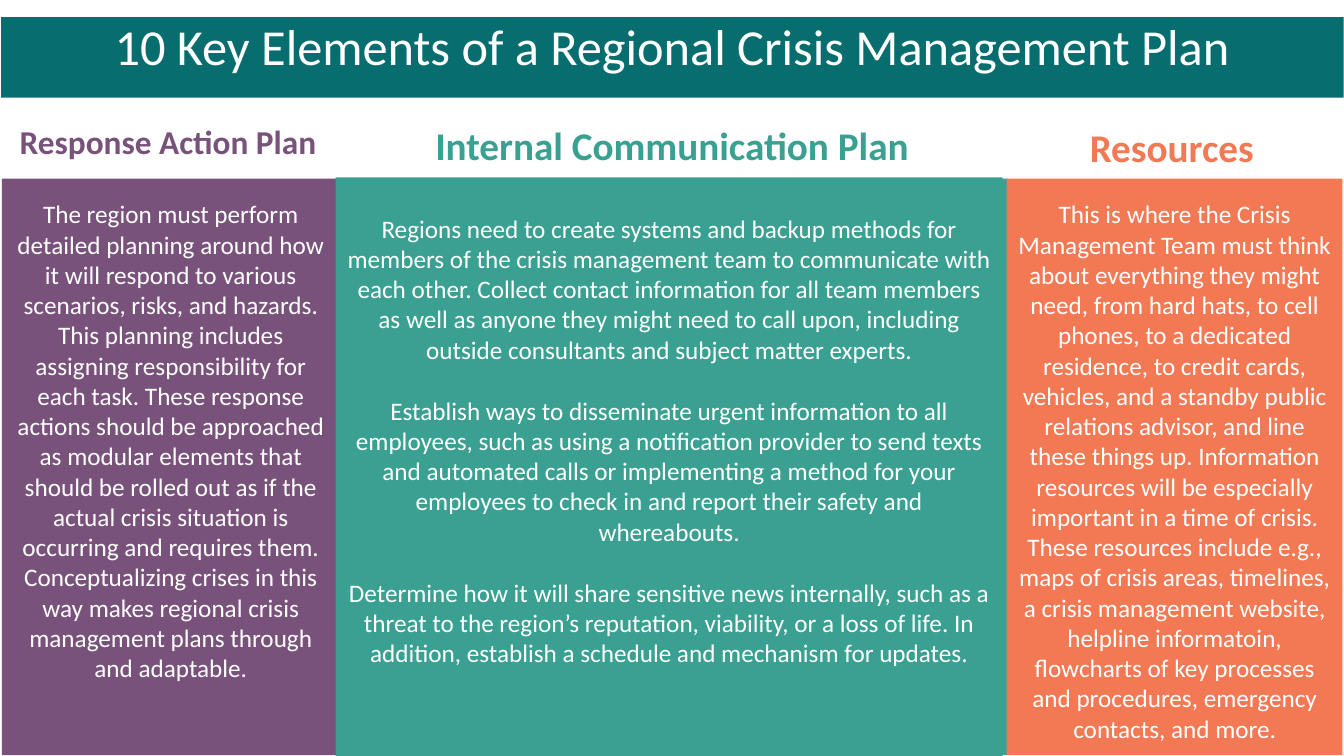
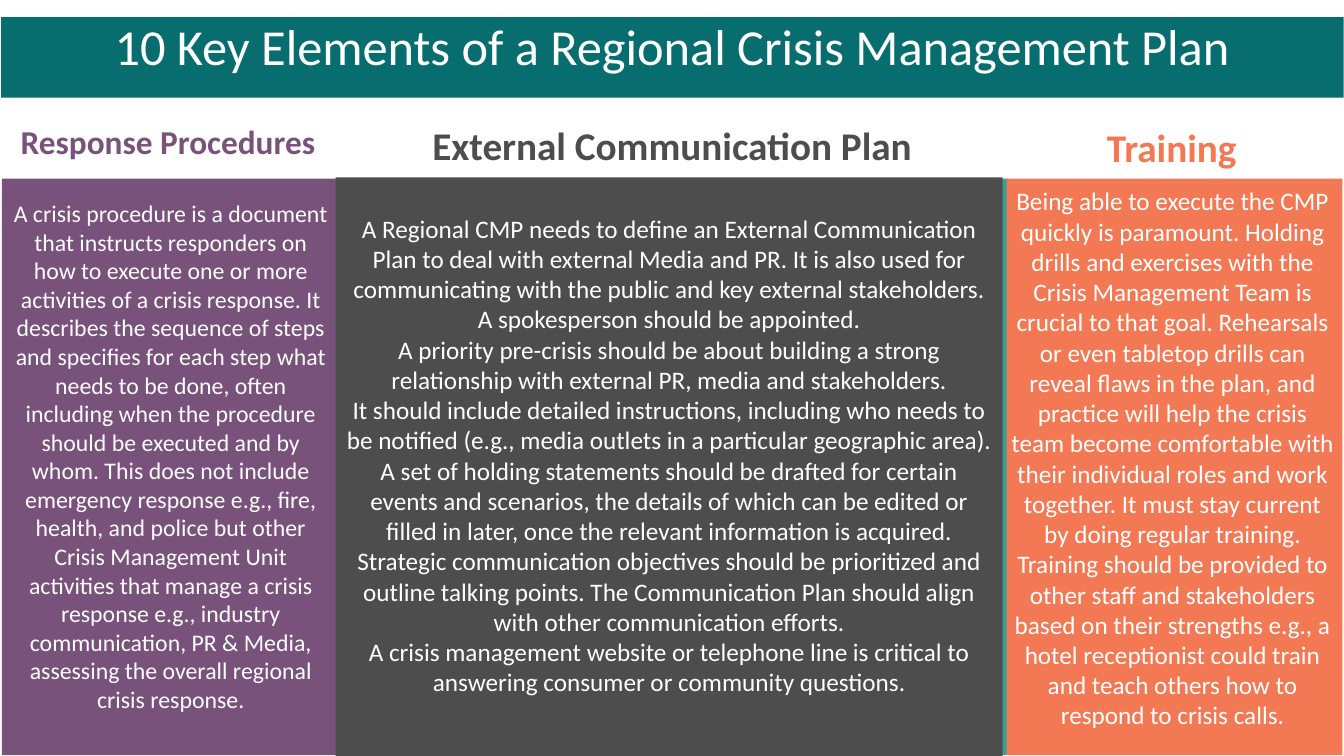
"""Build two slides on the key elements of a regional crisis management plan."""
from dataclasses import dataclass
from typing import NamedTuple

from pptx import Presentation
from pptx.dml.color import RGBColor
from pptx.enum import shapes, text
from pptx.util import Cm, Pt


@dataclass(frozen=True)
class Theme:
    font: str = "Calibri"
    banner: str = "086D6E"
    purple: str = "79527B"
    teal: str = "3AA091"
    orange: str = "F27954"
    gray: str = "4D4D4D"
    white: str = "FFFFFF"
    title_size: float = 36
    heading_size: float = 28
    side_heading_size: float = 23.8
    body_size: float = 18
    dense_size: float = 17
    line_gap: float = 22


class Frame(NamedTuple):
    left: float
    top: float
    width: float
    height: float


@dataclass(frozen=True)
class Column:
    heading: str
    paragraphs: tuple[str, ...]
    color: str
    body_frame: Frame
    size: float = 18
    gap: float = 0


@dataclass(frozen=True)
class Page:
    left: Column
    center: Column
    right: Column


THEME = Theme()
TITLE = "10 Key Elements of a Regional Crisis Management Plan"
TITLE_BAND = Frame(0.03, 0.43, 33.83, 2.03)
COLUMN_TOP, COLUMN_WIDTH, COLUMN_HEIGHT = 4.5, 8.46, 14.53
LEFT_BAND, TEAL_BAND, RIGHT_BAND = (
    Frame(left, COLUMN_TOP, COLUMN_WIDTH, COLUMN_HEIGHT) for left in (0.05, 16.94, 25.37))
CENTER_PANEL = Frame(8.46, 4.47, 16.81, 14.58)
LEFT_HEADING = Frame(0, 2.84, COLUMN_WIDTH, 1.63)
CENTER_HEADING = Frame(9.53, 2.9, 14.81, 1.63)
RIGHT_HEADING = Frame(25.3, 2.95, COLUMN_WIDTH, 1.63)
LEFT_BODY = Frame(0.1, 4.88, 8.41, 9.3)

PAGES = (
    Page(
        Column("Response Action Plan", (
            "The region must perform detailed planning around how it will respond to various "
            "scenarios, risks, and hazards. This planning includes assigning responsibility for "
            "each task. These response actions should be approached as modular elements that "
            "should be rolled out as if the actual crisis situation is occurring and requires "
            "them. Conceptualizing crises in this way makes regional crisis management plans "
            "through and adaptable.",
        ), THEME.purple, LEFT_BODY, THEME.body_size),
        Column("Internal Communication Plan", (
            "Regions need to create systems and backup methods for members of the crisis "
            "management team to communicate with each other. Collect contact information for "
            "all team members as well as anyone they might need to call upon, including outside "
            "consultants and subject matter experts.",
            "Establish ways to disseminate urgent information to all employees, such as using a "
            "notification provider to send texts and automated calls or implementing a method "
            "for your employees to check in and report their safety and whereabouts.",
            "Determine how it will share sensitive news internally, such as a threat to the "
            "region’s reputation, viability, or a loss of life. In addition, establish a "
            "schedule and mechanism for updates.",
        ), THEME.teal, CENTER_PANEL, THEME.body_size, THEME.line_gap),
        Column("Resources", (
            "This is where the Crisis Management Team must think about everything they might "
            "need, from hard hats, to cell phones, to a dedicated residence, to credit cards, "
            "vehicles, and a standby public relations advisor, and line these things up. "
            "Information resources will be especially important in a time of crisis. These "
            "resources include e.g., maps of crisis areas, timelines, a crisis management "
            "website, helpline informatoin, flowcharts of key processes and procedures, "
            "emergency contacts, and more.",
        ), THEME.orange, Frame(25.3, 4.88, 8.61, 9.3), THEME.body_size),
    ),
    Page(
        Column("Response Procedures", (
            "A crisis procedure is a document that instructs responders on how to execute one "
            "or more activities of a crisis response. It describes the sequence of steps and "
            "specifies for each step what needs to be done, often including when the procedure "
            "should be executed and by whom. This does not include emergency response e.g., "
            "fire, health, and police but other Crisis Management Unit activities that manage a "
            "crisis response e.g., industry communication, PR & Media, assessing the overall "
            "regional crisis response.",
        ), THEME.purple, LEFT_BODY, THEME.dense_size),
        Column("External Communication Plan", (
            "A Regional CMP needs to define an External Communication Plan to deal with external "
            "Media and PR. It is also used for communicating with the public and key external "
            "stakeholders. A spokesperson should be appointed.",
            "A priority pre-crisis should be about building a strong relationship with external "
            "PR, media and stakeholders.",
            "It should include detailed instructions, including who needs to be notified (e.g., "
            "media outlets in a particular geographic area).",
            "A set of holding statements should be drafted for certain events and scenarios, the "
            "details of which can be edited or filled in later, once the relevant information "
            "is acquired.",
            "Strategic communication objectives should be prioritized and outline talking "
            "points. The Communication Plan should align with other communication efforts.",
            "A crisis management website or telephone line is critical to answering consumer or "
            "community questions.",
        ), THEME.gray, CENTER_PANEL, THEME.body_size),
        Column("Training", (
            "Being able to execute the CMP quickly is paramount. Holding drills and exercises "
            "with the Crisis Management Team is crucial to that goal. Rehearsals or even "
            "tabletop drills can reveal flaws in the plan, and practice will help the crisis "
            "team become comfortable with their individual roles and work together. It must "
            "stay current by doing regular training. Training should be provided to other staff "
            "and stakeholders based on their strengths e.g., a hotel receptionist could train "
            "and teach others how to respond to crisis calls.",
        ), THEME.orange, Frame(25.22, 4.55, 8.66, 9.3), THEME.body_size),
    ),
)


def add_band(slide, frame: Frame, color: str):
    band = slide.shapes.add_shape(shapes.MSO_SHAPE.RECTANGLE, *map(Cm, frame))
    band.shadow.inherit = False
    band.fill.solid()
    band.fill.fore_color.rgb = RGBColor.from_string(color)
    band.line.fill.background()
    return band


def add_box(slide, frame: Frame):
    return slide.shapes.add_textbox(*map(Cm, frame))


def write(holder, *paragraphs: str, size: float, color: str = THEME.white, bold: bool = False,
          spacing: float = 1.0, gap: float = 0, middle: bool = False,
          top_inset: float = 0.13) -> None:
    frame = holder.text_frame
    frame.word_wrap = True
    frame.margin_top = Cm(top_inset)
    frame.vertical_anchor = text.MSO_ANCHOR.MIDDLE if middle else text.MSO_ANCHOR.TOP
    for index, words in enumerate(paragraphs):
        paragraph = frame.add_paragraph() if index else frame.paragraphs[0]
        paragraph.alignment = text.PP_ALIGN.CENTER
        paragraph.line_spacing = spacing
        if index and gap:
            paragraph.space_before = Pt(gap)
        run = paragraph.add_run()
        run.text = words
        run.font.name = THEME.font
        run.font.size = Pt(size)
        run.font.bold = bold
        run.font.color.rgb = RGBColor.from_string(color)


def add_heading(slide, frame: Frame, column: Column, size: float, spacing: float = 0.9) -> None:
    write(add_box(slide, frame), column.heading, size=size, color=column.color,
          bold=True, spacing=spacing, middle=True)


def add_body(holder, column: Column, top_inset: float = 0.13) -> None:
    write(holder, *column.paragraphs, size=column.size, gap=column.gap, top_inset=top_inset)


def add_page(deck, page: Page) -> None:
    slide = deck.slides.add_slide(deck.slide_layouts[6])
    add_band(slide, LEFT_BAND, page.left.color)
    add_band(slide, TEAL_BAND, THEME.teal)
    add_band(slide, RIGHT_BAND, page.right.color)
    write(add_band(slide, TITLE_BAND, THEME.banner), TITLE, size=THEME.title_size, spacing=0.9)
    add_heading(slide, LEFT_HEADING, page.left, THEME.side_heading_size, spacing=0.8)
    add_heading(slide, CENTER_HEADING, page.center, THEME.heading_size)
    add_heading(slide, RIGHT_HEADING, page.right, THEME.heading_size)
    add_body(add_band(slide, page.center.body_frame, page.center.color), page.center,
             top_inset=0.9)
    for column in (page.left, page.right):
        add_body(add_box(slide, column.body_frame), column)


def main() -> None:
    deck = Presentation()
    deck.slide_width, deck.slide_height = Cm(33.87), Cm(19.05)
    for page in PAGES:
        add_page(deck, page)
    deck.save("out.pptx")


if __name__ == "__main__":
    main()
